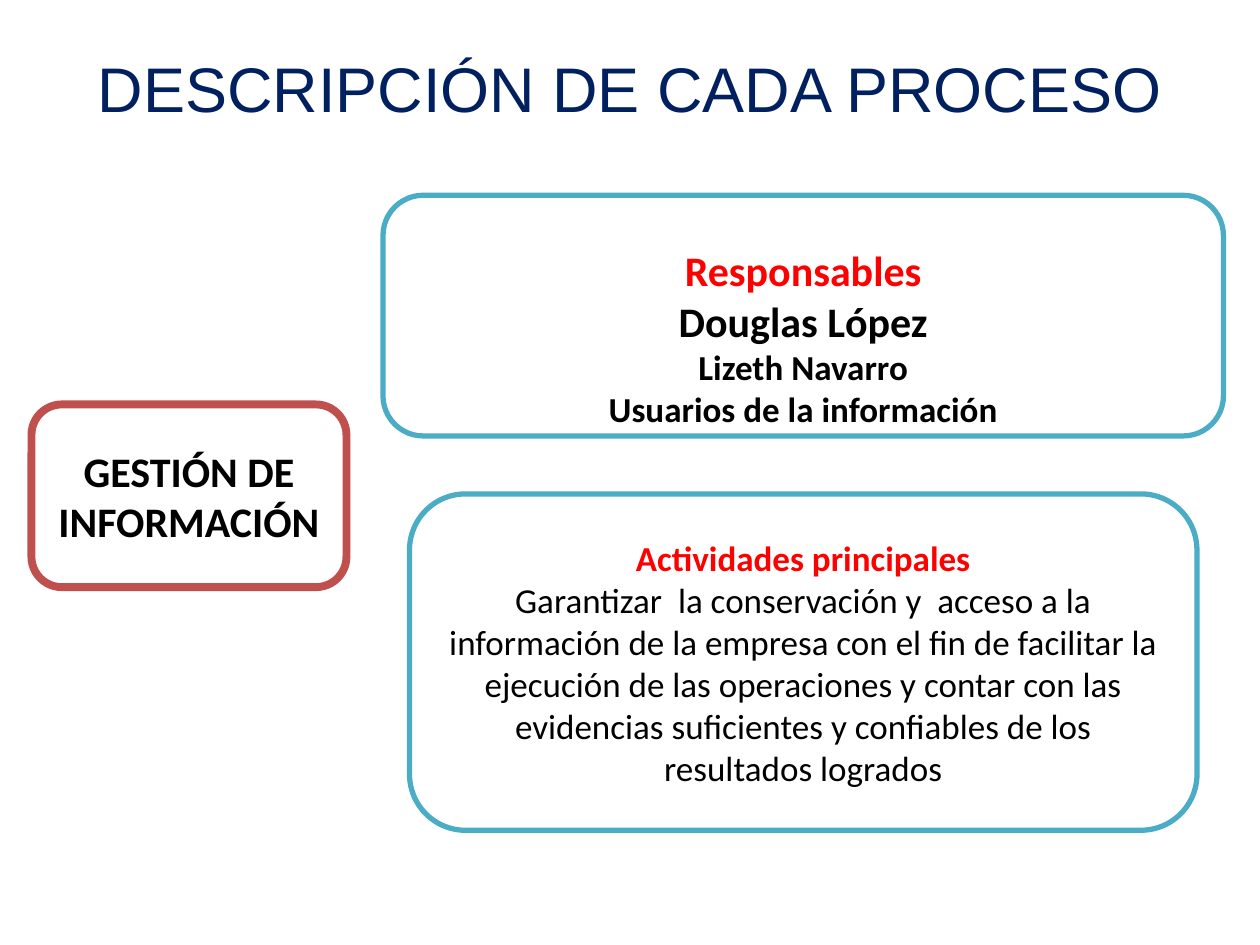
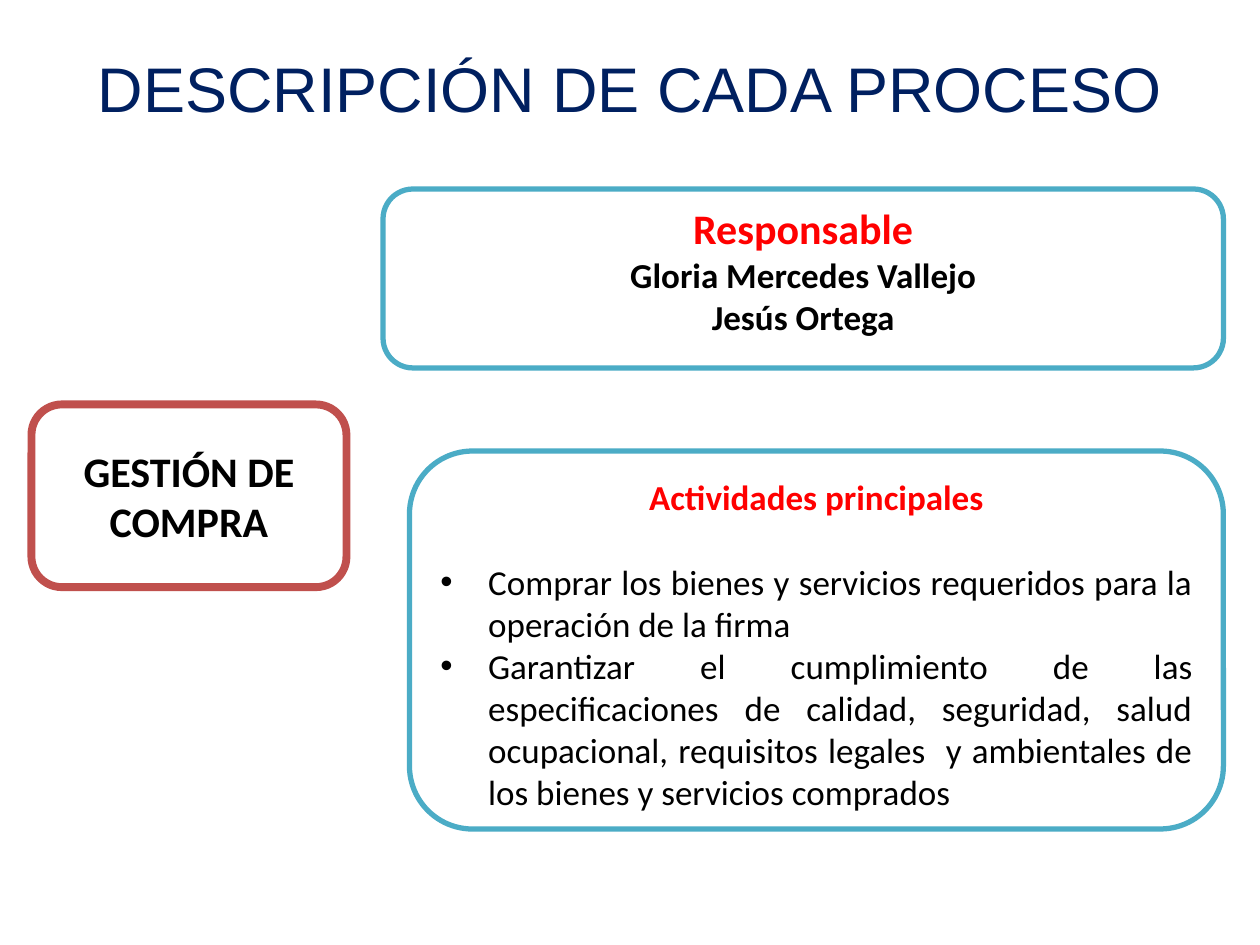
import pptx
import pptx.dml.color
import pptx.enum.shapes
import pptx.enum.text
import pptx.oxml
import pptx.oxml.ns
import pptx.util
from pptx.util import Inches, Pt

ALIGN = pptx.enum.text.PP_ALIGN
ANCHOR = pptx.enum.text.MSO_ANCHOR

WIDTH, HEIGHT = 10, 7.5
NAVY, RED, BLACK, WHITE = "002060", "FF0000", "000000", "FFFFFF"
BRICK, TEAL = "C0504D", "4BACC6"
HEADING = "DESCRIPCIÓN DE CADA PROCESO"
HEADING_AREA = (0.5, 0.3, 9, 0.78)
PROCESS_AREA = (0.25, 3.21, 2.5, 1.45)
LARGE, MEDIUM = 24, 20
INDENT = 0.38

# Each text line is (text, style); each style is described in STYLES.
STYLES = {
    "heading": dict(size=36, color=NAVY, font="Arial"),
    "process": dict(size=LARGE, bold=True),
    "role": dict(size=LARGE, color=RED, bold=True),
    "lead": dict(size=LARGE, bold=True),
    "person": dict(size=MEDIUM, bold=True),
    "topic": dict(size=MEDIUM, color=RED, bold=True),
    "spaced topic": dict(size=MEDIUM, color=RED, bold=True, after=24.4),
    "body": dict(size=MEDIUM),
    "bullet": dict(size=MEDIUM, bullet=True),
}

PROCESSES = [
    {
        "name": "GESTIÓN DE INFORMACIÓN",
        "people": {
            "area": (3.04, 1.55, 6.67, 1.91), "anchor": ANCHOR.TOP, "top": 0.3,
            "lines": [
                ("Responsables", "role"),
                ("Douglas López", "lead"),
                ("Lizeth Navarro", "person"),
                ("Usuarios de la información", "person"),
            ],
        },
        "activities": {
            "area": (3.25, 3.92, 6.25, 2.67),
            "lines": [
                ("Actividades principales", "topic"),
                ("Garantizar  la conservación y  acceso a la información de la "
                 "empresa con el fin de facilitar la ejecución de las operaciones "
                 "y contar con las evidencias suficientes y confiables de los "
                 "resultados logrados", "body"),
            ],
        },
    },
    {
        "name": "GESTIÓN DE COMPRA",
        "people": {
            "area": (3.04, 1.5, 6.67, 1.42), "anchor": ANCHOR.TOP, "top": 0.04,
            "lines": [
                ("Responsable", "role"),
                ("Gloria Mercedes Vallejo", "person"),
                ("Jesús Ortega", "person"),
            ],
        },
        "activities": {
            "area": (3.25, 3.58, 6.46, 3), "anchor": ANCHOR.TOP,
            "lines": [
                ("Actividades principales", "spaced topic"),
                ("Comprar los bienes y servicios requeridos para la operación "
                 "de la firma", "bullet"),
                ("Garantizar el cumplimiento de las especificaciones de calidad, "
                 "seguridad, salud ocupacional, requisitos legales  y ambientales "
                 "de los bienes y servicios comprados", "bullet"),
            ],
        },
    },
]


def rgb(value):
    return pptx.dml.color.RGBColor.from_string(value)


def add_bullet(paragraph):
    properties = paragraph._p.get_or_add_pPr()
    properties.set("marL", str(Inches(INDENT)))
    properties.set("indent", str(-Inches(INDENT)))
    namespace = pptx.oxml.ns.nsdecls("a")
    for element in ('buFont {} typeface="Arial"', 'buChar {} char="•"'):
        properties.append(pptx.oxml.parse_xml(f"<a:{element.format(namespace)}/>"))


def style_line(paragraph, size, color=BLACK, font="Calibri", bold=False,
               after=0, bullet=False):
    paragraph.alignment = ALIGN.JUSTIFY if bullet else ALIGN.CENTER
    paragraph.space_after = Pt(after)
    if bullet:
        add_bullet(paragraph)
    paragraph.font.size = Pt(size)
    paragraph.font.name = font
    paragraph.font.bold = bold
    paragraph.font.color.rgb = rgb(color)


def write(frame, lines, anchor=ANCHOR.MIDDLE, top=0.05):
    frame.word_wrap = True
    frame.vertical_anchor = anchor
    frame.margin_top = Inches(top)
    for number, (text, style) in enumerate(lines):
        paragraph = frame.add_paragraph() if number else frame.paragraphs[0]
        paragraph.text = text
        style_line(paragraph, **STYLES[style])


def add_panel(slide, area, lines, outline=TEAL, weight=3, **placing):
    """Add a white rounded box with a coloured outline and its text."""
    panel = slide.shapes.add_shape(
        pptx.enum.shapes.MSO_SHAPE.ROUNDED_RECTANGLE, *map(Inches, area))
    panel.shadow.inherit = False
    panel.fill.solid()
    panel.fill.fore_color.rgb = rgb(WHITE)
    panel.line.color.rgb = rgb(outline)
    panel.line.width = Pt(weight)
    write(panel.text_frame, lines, **placing)


def add_process_slide(deck, process):
    slide = deck.slides.add_slide(deck.slide_layouts[6])
    heading = slide.shapes.add_textbox(*map(Inches, HEADING_AREA))
    write(heading.text_frame, [(HEADING, "heading")])
    add_panel(slide, PROCESS_AREA, [(process["name"], "process")], BRICK, 4.5)
    add_panel(slide, **process["people"])
    add_panel(slide, **process["activities"])


def main():
    deck = pptx.Presentation()
    deck.slide_width, deck.slide_height = Inches(WIDTH), Inches(HEIGHT)
    for process in PROCESSES:
        add_process_slide(deck, process)
    deck.save("out.pptx")


if __name__ == "__main__":
    main()
